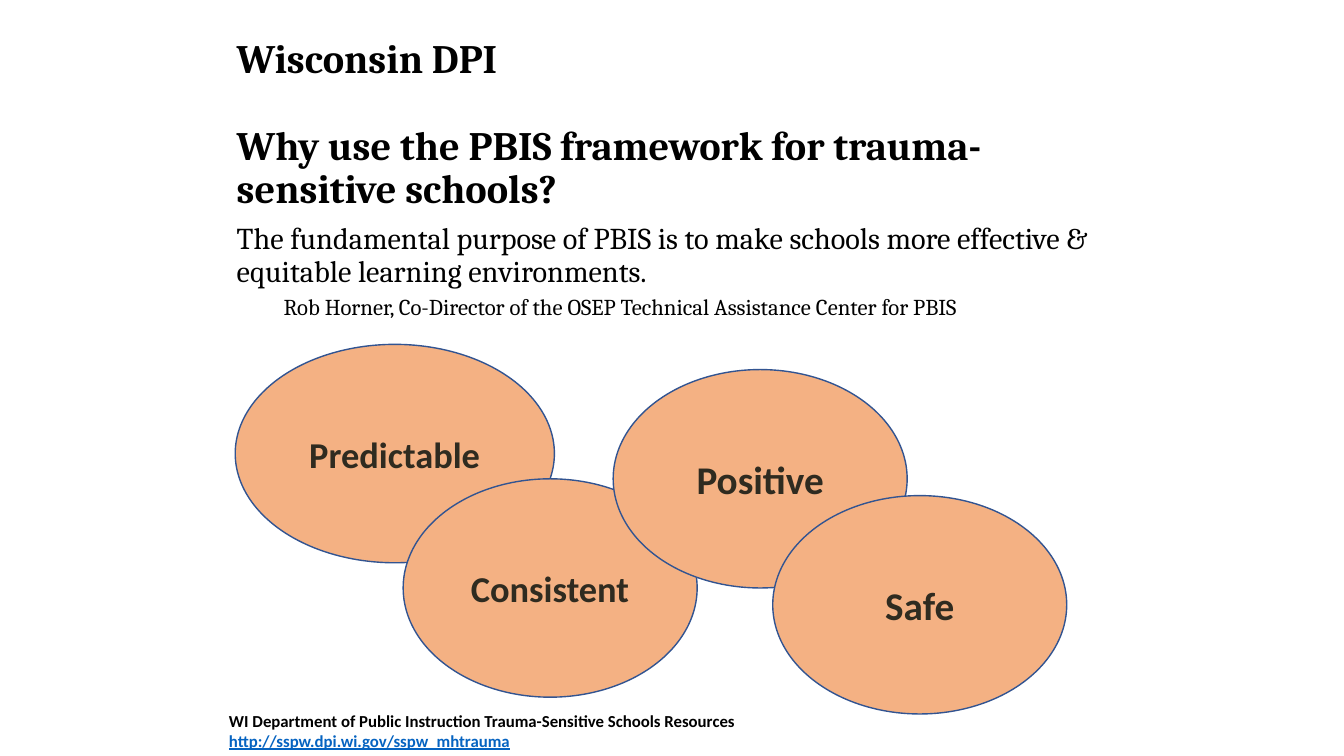
from pptx import Presentation
from pptx.dml.color import RGBColor as Color
from pptx.enum.shapes import MSO_SHAPE as Shape
from pptx.enum.text import MSO_ANCHOR as Anchor, PP_ALIGN as Align
from pptx.util import Pt

COLORS = {"text": "000000", "oval": "F4B183", "outline": "325491",
          "label": "2F2B20", "link": "0563C1"}


class SlideBuilder:
    """Holds the style and the current slide, and adds its elements."""

    def __init__(self, deck):
        self.slide = deck.slides.add_slide(deck.slide_layouts[6])
        self.heading_font = "Cambria"
        self.label_font = "Calibri"

    def color(self, name):
        return Color.from_string(COLORS[name])

    def style(self, para, size, font, color="text", bold=False, underline=False):
        for span in para.runs:
            span.font.size = Pt(size)
            span.font.name = font
            span.font.bold = bold
            span.font.underline = underline
            span.font.color.rgb = self.color(color)

    def text_box(self, left, top, width, height, lines, wrap=True):
        box = self.slide.shapes.add_textbox(Pt(left), Pt(top), Pt(width), Pt(height))
        frame = box.text_frame
        frame.word_wrap = wrap
        frame.text = "\n".join(line["text"] for line in lines)
        for para, line in zip(frame.paragraphs, lines):
            para.line_spacing = line.get("spacing", 1.0)
            para.space_before = Pt(line.get("before", 0))
            indent = Pt(line.get("indent", 0))
            para._p.get_or_add_pPr().set("marL", str(indent))
            self.style(para, **line["style"])
        return box

    def oval(self, left, top, width, height, label, size):
        oval = self.slide.shapes.add_shape(
            Shape.OVAL, Pt(left), Pt(top), Pt(width), Pt(height))
        oval.shadow.inherit = False
        oval.fill.solid()
        oval.fill.fore_color.rgb = self.color("oval")
        oval.line.color.rgb = self.color("outline")
        oval.line.width = Pt(1)
        frame = oval.text_frame
        frame.vertical_anchor = Anchor.MIDDLE
        frame.text = label
        para = frame.paragraphs[0]
        para.alignment = Align.CENTER
        self.style(para, size, self.label_font, "label", bold=True)


def main():
    deck = Presentation()
    deck.slide_width, deck.slide_height = Pt(960), Pt(540)
    builder = SlideBuilder(deck)

    heading = {"size": 28.8, "font": builder.heading_font, "bold": True}
    body = {"size": 21.6, "font": builder.heading_font}
    credit = {"size": 16.2, "font": builder.heading_font}
    builder.text_box(162, 24, 636, 210, [
        {"text": "Wisconsin DPI", "style": heading, "spacing": 0.9},
        {"text": "Why use the PBIS framework for trauma-sensitive schools?",
         "style": heading, "spacing": 0.9, "before": 31},
        {"text": "The fundamental purpose of PBIS is to make schools more "
                 "effective & equitable learning environments.",
         "style": body, "spacing": 0.9, "before": 8},
        {"text": "Rob Horner, Co-Director of the OSEP Technical Assistance "
                 "Center for PBIS",
         "style": credit, "spacing": 0.9, "before": 5, "indent": 33.5},
    ])

    for left, top, width, label, size in [
        (168, 246, 228, "Predictable", 26),
        (288, 342, 210, "Consistent", 26),
        (438, 264, 210, "Positive", 28),
        (552, 354, 210, "Safe", 28),
    ]:
        builder.oval(left, top, width, 156, label, size)

    source = {"size": 12, "font": builder.label_font, "bold": True}
    link = {**source, "color": "link", "underline": True}
    builder.text_box(156.5, 504, 381.5, 36, [
        {"text": "WI Department of Public Instruction Trauma-Sensitive Schools "
                 "Resources", "style": source},
        {"text": "http://sspw.dpi.wi.gov/sspw_mhtrauma", "style": link},
    ], wrap=False)

    deck.save("out.pptx")


if __name__ == "__main__":
    main()
